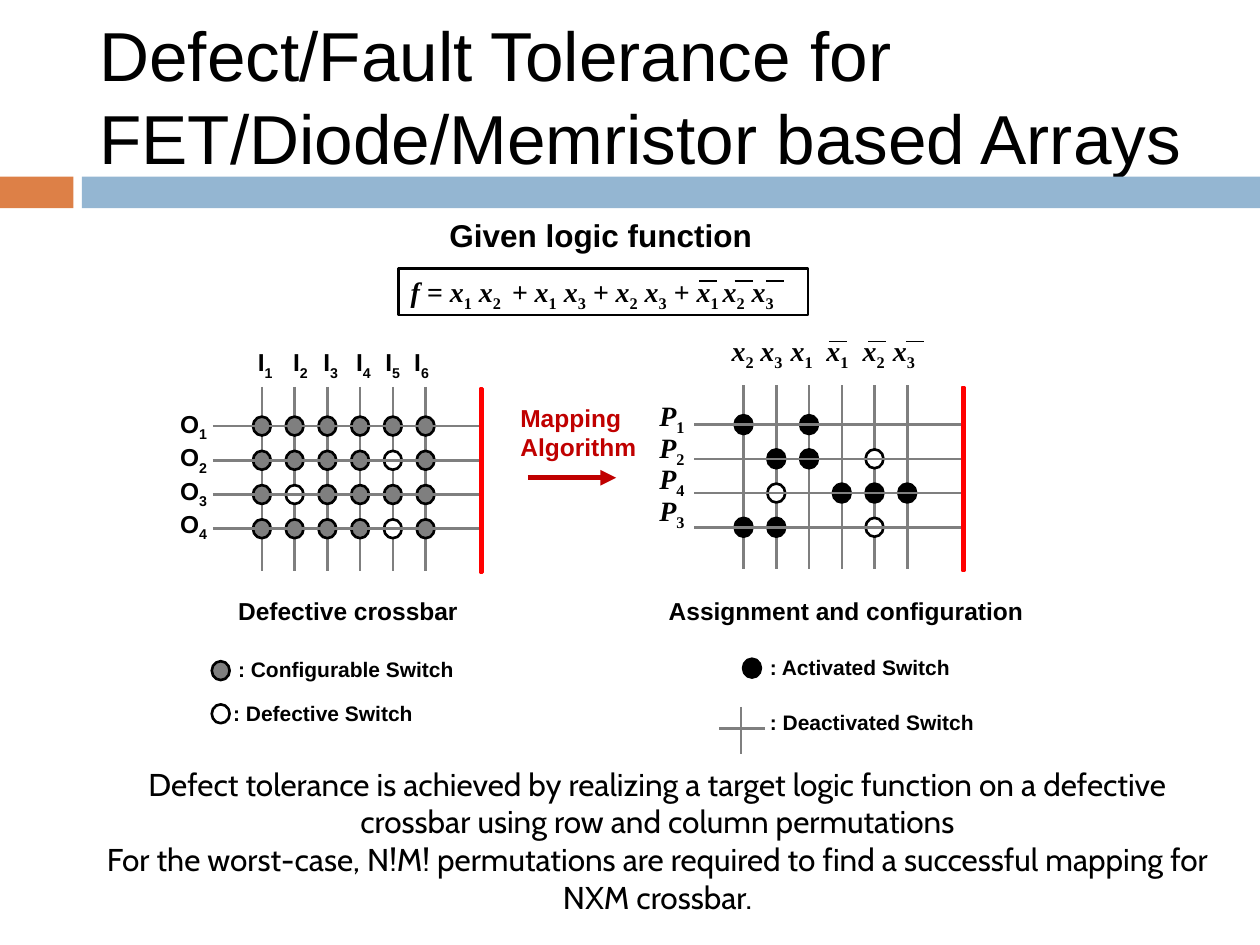
from dataclasses import dataclass

from lxml.etree import SubElement
from pptx import Presentation
from pptx.dml.color import RGBColor
from pptx.enum.shapes import MSO_CONNECTOR, MSO_SHAPE
from pptx.enum.text import MSO_ANCHOR, PP_ALIGN
from pptx.oxml.ns import qn
from pptx.util import Cm, Pt

COLORS = {
    "orange": "DD8047", "blue": "94B6D2", "black": "000000", "white": "FFFFFF",
    "gray": "7F7F7F", "red": "FF0000", "dark_red": "C00000",
}
DOT_FILLS = {"c": "gray", "d": "white", "a": "black"}
COLUMN_COUNT, ROW_COUNT = 6, 4
COLUMN_PITCH, ROW_PITCH = 0.66, 0.69
DOT_WIDTH, DOT_HEIGHT = 0.36, 0.38


@dataclass
class Crossbar:
    """Wire grid; each row string holds c(onfigurable), d(efective), a(ctivated) or a dot for none."""
    left: float
    top: float
    rows: tuple[str, ...]


@dataclass
class Label:
    """Text box; an underscore makes the next character a subscript."""
    left: float
    top: float
    width: float
    height: float
    lines: tuple[str, ...]
    size: float = 14
    font: str = "Arial"
    color: str = "black"
    bold: bool = True
    italic: bool = False
    spacing: float | None = None
    align: PP_ALIGN = PP_ALIGN.LEFT
    tabs: tuple[float, ...] = ()


CROSSBARS = (
    Crossbar(5.28, 8.59, ("cccccc", "ccccdc", "cdcccc", "ccccdc")),
    Crossbar(14.99, 8.56, ("a.a...", ".aa.d.", ".d.aaa", "aa..d.")),
)

MATH = {"size": 16, "font": "Times New Roman", "italic": True}
LABELS = (
    Label(8.81, 4.24, 6.65, 1.02, ("Given logic function",), size=18),
    Label(8.03, 5.41, 8.26, 0.94,
          ("f = x_1 x_2\t+ x_1 x_3 + x_2 x_3 + x_1\tx_2 x_3",), tabs=(2.04, 6.29), **MATH),
    Label(4.95, 6.88, 4.65, 0.86, ("I_1\tI_2\tI_3\tI_4\tI_5\tI_6",),
          tabs=(0.71, 1.32, 1.98, 2.57, 3.15)),
    Label(14.5, 6.6, 6.58, 0.94, ("x_2\tx_3\tx_1\tx_1\tx_2\tx_3",),
          tabs=(0.58, 1.19, 1.91, 2.64, 3.25), **MATH),
    Label(3.38, 8.13, 1.17, 2.97, ("O_1", "O_2", "O_3", "O_4"), spacing=19),
    Label(12.88, 8.05, 1.17, 3.45, ("P_1", "P_2", "P_4", "P_3"), spacing=18,
          align=PP_ALIGN.RIGHT, **MATH),
    Label(10.24, 8, 3.07, 1.45, ("Mapping", "Algorithm"), color="dark_red"),
    Label(4.55, 11.89, 5.21, 0.86, ("Defective crossbar",)),
    Label(13.23, 11.89, 7.8, 0.86, ("Assignment and configuration",)),
    Label(4.55, 13.11, 5.16, 0.76, (": Configurable Switch",), size=12),
    Label(4.45, 14, 4.47, 0.76, (": Defective Switch",), size=12),
    Label(15.27, 13.08, 4.47, 0.76, (": Activated Switch",), size=12),
    Label(15.27, 14.17, 5.16, 0.76, (": Deactivated Switch",), size=12),
    Label(1.75, 15.29, 23.01, 3.33, (
        "Defect tolerance is achieved by realizing a target logic function on a defective "
        "crossbar using row and column permutations",
        "For the worst-case, N!M! permutations are required to find a successful mapping for "
        "NXM crossbar.",
    ), size=18, font="Cabin", bold=False, align=PP_ALIGN.CENTER),
)


def rgb(name: str) -> RGBColor:
    return RGBColor.from_string(COLORS[name])


def add_box(slide, kind, left: float, top: float, width: float, height: float,
            fill: str, line: str | None = None):
    shape = slide.shapes.add_shape(kind, Cm(left), Cm(top), Cm(width), Cm(height))
    shape.shadow.inherit = False
    shape.fill.solid()
    shape.fill.fore_color.rgb = rgb(fill)
    if line:
        shape.line.color.rgb = rgb(line)
        shape.line.width = Pt(1.5)
    else:
        shape.line.fill.background()
    return shape


def add_dot(slide, center_x: float, center_y: float, fill: str) -> None:
    add_box(slide, MSO_SHAPE.OVAL, center_x - DOT_WIDTH / 2, center_y - DOT_HEIGHT / 2,
            DOT_WIDTH, DOT_HEIGHT, fill, "black")


def add_line(slide, x1: float, y1: float, x2: float, y2: float,
             color: str = "gray", width: float = 1.5):
    connector = slide.shapes.add_connector(
        MSO_CONNECTOR.STRAIGHT, Cm(x1), Cm(y1), Cm(x2), Cm(y2))
    connector.line.color.rgb = rgb(color)
    connector.line.width = Pt(width)
    SubElement(connector._element.spPr, qn("a:effectLst"))
    return connector


def add_crossbar(slide, crossbar: Crossbar) -> None:
    left, top = crossbar.left, crossbar.top
    columns = [left + index * COLUMN_PITCH for index in range(COLUMN_COUNT)]
    rows = [top + index * ROW_PITCH for index in range(ROW_COUNT)]
    for x in columns:
        add_line(slide, x, top - 0.79, x, top + 2.92)
    for y, switches in zip(rows, crossbar.rows):
        for x, switch in zip(columns, switches):
            if switch in DOT_FILLS:
                add_dot(slide, x, y, DOT_FILLS[switch])
    for y in rows:
        add_line(slide, left - 0.99, y, left + 4.48, y)
    add_box(slide, MSO_SHAPE.RECTANGLE, left + 4.4, top - 0.76, 0.05, 3.71, "gray", "red")


def add_run(paragraph, text: str, label: Label, subscript: bool = False) -> None:
    run = paragraph.add_run()
    run.text = text
    run.font.name = label.font
    run.font.size = Pt(label.size)
    run.font.bold = label.bold
    run.font.italic = label.italic and not subscript
    run.font.color.rgb = rgb(label.color)
    if subscript:
        run.font._element.set("baseline", "-25000")


def add_label(slide, label: Label) -> None:
    text_box = slide.shapes.add_textbox(
        Cm(label.left), Cm(label.top), Cm(label.width), Cm(label.height))
    text_frame = text_box.text_frame
    text_frame.word_wrap = True
    for index, line in enumerate(label.lines):
        paragraph = text_frame.add_paragraph() if index else text_frame.paragraphs[0]
        paragraph.alignment = label.align
        if label.spacing:
            paragraph.line_spacing = Pt(label.spacing)
        if label.tabs:
            tab_list = SubElement(paragraph._p.get_or_add_pPr(), qn("a:tabLst"))
            for position in label.tabs:
                SubElement(tab_list, qn("a:tab"), pos=str(Cm(position)), algn="l")
        first, *rest = line.split("_")
        if first:
            add_run(paragraph, first, label)
        for part in rest:
            add_run(paragraph, part[0], label, subscript=True)
            if part[1:]:
                add_run(paragraph, part[1:], label)


def set_title(slide, text: str) -> None:
    title = slide.shapes.title
    title.left, title.top, title.width, title.height = Cm(1.75), Cm(0.08), Cm(23.24), Cm(3.68)
    title.text_frame.text = text
    title.text_frame.word_wrap = True
    title.text_frame.vertical_anchor = MSO_ANCHOR.MIDDLE
    paragraph = title.text_frame.paragraphs[0]
    paragraph.alignment = PP_ALIGN.LEFT
    paragraph.line_spacing = Pt(47.5)
    font = paragraph.runs[0].font
    font.name, font.size = "Arial", Pt(39.6)
    font.color.rgb = rgb("black")


def main() -> None:
    presentation = Presentation()
    presentation.slide_width, presentation.slide_height = Cm(25.4), Cm(19.05)
    slide = presentation.slides.add_slide(presentation.slide_layouts[5])
    set_title(slide, "Defect/Fault Tolerance for FET/Diode/Memristor based Arrays")
    add_box(slide, MSO_SHAPE.RECTANGLE, 0, 3.56, 1.48, 0.64, "orange")
    add_box(slide, MSO_SHAPE.RECTANGLE, 1.65, 3.56, 23.75, 0.64, "blue")
    add_box(slide, MSO_SHAPE.RECTANGLE, 8.03, 5.41, 8.26, 0.94, "white", "black")

    for crossbar in CROSSBARS:
        add_crossbar(slide, crossbar)
    for label in LABELS:
        add_label(slide, label)

    for y, width, starts in ((5.66, 1, (14.1, 14.81, 15.44)), (6.88, 0.75, (16.71, 17.5, 18.26))):
        for x in starts:
            add_line(slide, x, y, x + 0.36, y, "black", width)

    arrow = add_line(slide, 10.64, 9.63, 12.42, 9.63, "dark_red", 3)
    SubElement(arrow.line._get_or_add_ln(), qn("a:tailEnd"), type="triangle")

    for x, y, fill in ((4.45, 13.52, "gray"), (4.45, 14.39, "white"), (15.16, 13.47, "black")):
        add_dot(slide, x, y, fill)
    add_line(slide, 14.94, 14.25, 14.94, 15.19)
    add_line(slide, 14.5, 14.68, 15.42, 14.68)
    presentation.save("out.pptx")


if __name__ == "__main__":
    main()
